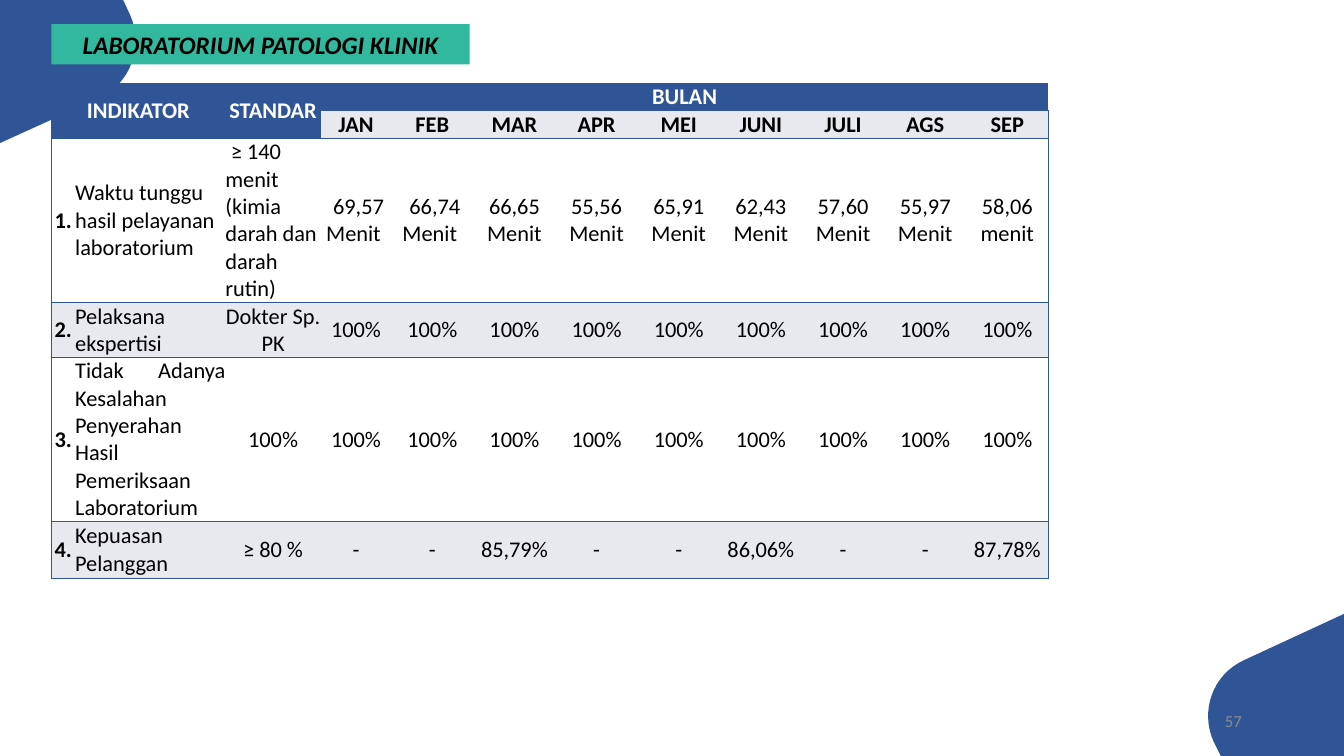
from lxml.etree import SubElement
from pptx import Presentation
from pptx.dml.color import RGBColor
from pptx.enum.text import MSO_ANCHOR, PP_ALIGN
from pptx.oxml.ns import qn
from pptx.util import Pt

HUES = {"blue": "2F5597", "green": "32B89E", "pale": "E8E9EF",
        "white": "FFFFFF", "black": "000000", "gray": "8C8C8C"}
PLAIN = "{2D5ABB26-0587-4C30-8999-92F81FD0307C}"
WIDTHS = [17, 107.3, 68.2, 50.3] + [58.7] * 8
HEIGHTS = [19.5, 19.5, 62, 26, 77, 40.3]
MONTHS = ["JAN", "FEB", "MAR", "APR", "MEI", "JUNI", "JULI", "AGS", "SEP"]
ROWS = [
    ["INDIKATOR", "", "STANDAR", "BULAN"] + [""] * 8,
    ["", "", ""] + MONTHS,
    ["1.", "Waktu tunggu hasil pelayanan laboratorium",
     "≥ 140 menit (kimia darah dan darah rutin)",
     " 69,57 Menit ", " 66,74 Menit ", "66,65 Menit", "55,56 Menit",
     "65,91 Menit", "62,43 Menit", "57,60 Menit", "55,97 Menit",
     "58,06 menit"],
    ["2.", "Pelaksana ekspertisi", "Dokter Sp. PK"] + ["100%"] * 9,
    ["3.", "Tidak Adanya Kesalahan Penyerahan Hasil Pemeriksaan Laboratorium",
     "100%"] + ["100%"] * 9,
    ["4.", "Kepuasan Pelanggan", "≥ 80 %", "-", "-", "85,79%", "-", "-",
     "86,06%", "-", "-", "87,78%"],
]


def paint(fill, hue):
    fill.solid()
    fill.fore_color.rgb = RGBColor.from_string(HUES[hue])


def write(frame, text, size, hue, align, bold=False, slant=False):
    frame.text = text
    para = frame.paragraphs[0]
    para.alignment = align
    for run in para.runs:
        font = run.font
        font.name, font.size = "Calibri", Pt(size)
        font.bold, font.italic = bold, slant
        font.color.rgb = RGBColor.from_string(HUES[hue])


def place(shape, left, top, width, height):
    shape.left, shape.top = Pt(left), Pt(top)
    shape.width, shape.height = Pt(width), Pt(height)


def curve(ends, steps=16):
    a, b, c, d = ends
    for step in range(1, steps + 1):
        t = step / steps
        u = 1 - t
        yield tuple(u**3 * p + 3 * u * u * t * q + 3 * u * t * t * r + t**3 * s
                    for p, q, r, s in zip(a, b, c, d))


def corner(slide, first, bend, last):
    dots = [*first, bend[0], *curve(bend), *last]
    dots = [(Pt(x), Pt(y)) for x, y in dots]
    form = slide.shapes.build_freeform(*dots[0])
    form.add_line_segments(dots[1:], close=True)
    shape = form.convert_to_shape()
    shape.shadow.inherit = False
    paint(shape.fill, "blue")
    shape.line.fill.background()


def banner(slide, text):
    title = slide.shapes.title
    slide.shapes.element.append(title.element)
    place(title, 36.7, 17.2, 298.8, 28.8)
    geom = SubElement(title.element.spPr, qn("a:prstGeom"), prst="round2DiagRect")
    SubElement(geom, qn("a:avLst"))
    paint(title.fill, "green")
    write(title.text_frame, text, 18, "black", PP_ALIGN.CENTER, True, True)
    title.text_frame.vertical_anchor = MSO_ANCHOR.MIDDLE


def border(cell, sides):
    props = cell._tc.get_or_add_tcPr()
    for side in sides:
        line = SubElement(props, qn(f"a:ln{side}"), w=str(Pt(1)))
        fill = SubElement(line, qn("a:solidFill"))
        SubElement(fill, qn("a:srgbClr"), val=HUES["blue"])


def style(cell, row, col, text):
    cell.margin_left = cell.margin_right = 0
    cell.margin_top = cell.margin_bottom = 0
    cell.vertical_anchor = MSO_ANCHOR.MIDDLE
    last = len(WIDTHS) - 1
    border(cell, ("L" if col == 0 else "") + ("R" if col == last else "") + "TB")
    head = row == 0 or (row == 1 and col < 3)
    paint(cell.fill, "blue" if head else "pale" if row % 2 else "white")
    align = PP_ALIGN.CENTER
    if row == 2 and col in (1, 2):
        align = PP_ALIGN.LEFT
    elif row > 2 and col == 1:
        align = PP_ALIGN.JUSTIFY
    write(cell.text_frame, text, 16, "white" if head else "black", align,
          row < 2 or col == 0)


def grid(slide):
    frame = slide.shapes.add_table(len(ROWS), len(WIDTHS), Pt(36.7), Pt(59.6),
                                   Pt(712.4), Pt(348))
    table = frame.table
    table.first_row = table.horz_banding = False
    table._tbl.tblPr.find(qn("a:tableStyleId")).text = PLAIN
    for col, width in zip(table.columns, WIDTHS):
        col.width = Pt(width)
    for row, height in zip(table.rows, HEIGHTS):
        row.height = Pt(height)
    for row, texts in enumerate(ROWS):
        for col, text in enumerate(texts):
            style(table.cell(row, col), row, col, text)
    for top, left, low, right in ((0, 0, 1, 1), (0, 2, 1, 2), (0, 3, 0, 11)):
        table.cell(top, left).merge(table.cell(low, right))
    para = table.cell(2, 2).text_frame.paragraphs[0]
    para._p.get_or_add_pPr().set("indent", str(Pt(4)))
    frame.height = Pt(348)


def number(slide, text):
    box = slide.shapes.add_textbox(Pt(678.2), Pt(500.4), Pt(216), Pt(28.8))
    box.text_frame.word_wrap = True
    box.text_frame.vertical_anchor = MSO_ANCHOR.MIDDLE
    write(box.text_frame, text, 12, "gray", PP_ALIGN.RIGHT)


def main():
    deck = Presentation()
    deck.slide_width, deck.slide_height = Pt(960), Pt(540)
    slide = deck.slides.add_slide(deck.slide_layouts[5])
    corner(slide, [(960, 540), (872, 540)],
           [(867, 530), (857, 508), (866, 482), (888.5, 471.6)],
           [(960, 438.5)])
    corner(slide, [(0, 0), (88, 0)],
           [(93, 10.8), (103, 33), (93, 60), (71.3, 69.8)],
           [(0, 102.2)])
    grid(slide)
    banner(slide, "LABORATORIUM PATOLOGI KLINIK")
    number(slide, "57")
    deck.save("out.pptx")


if __name__ == "__main__":
    main()
